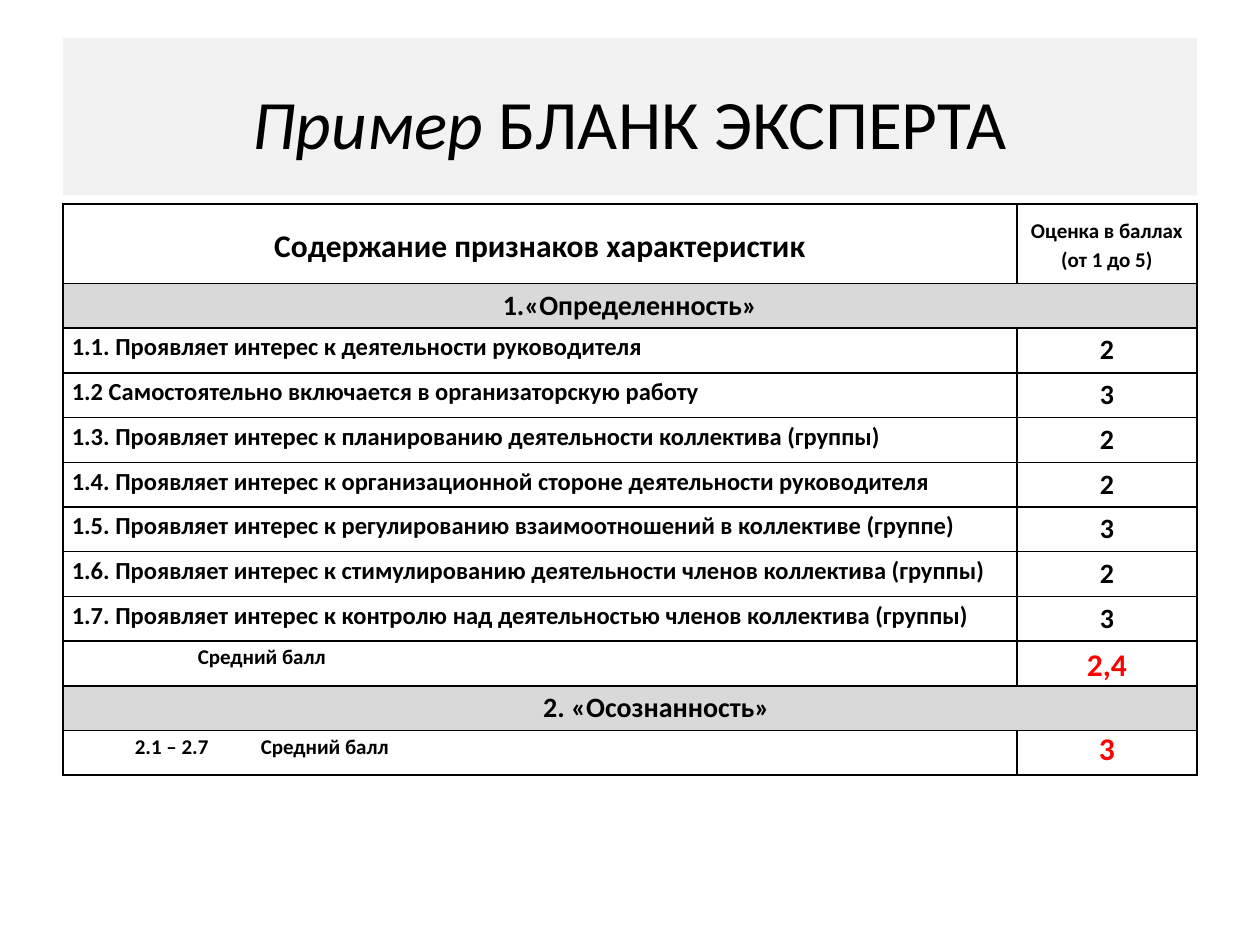
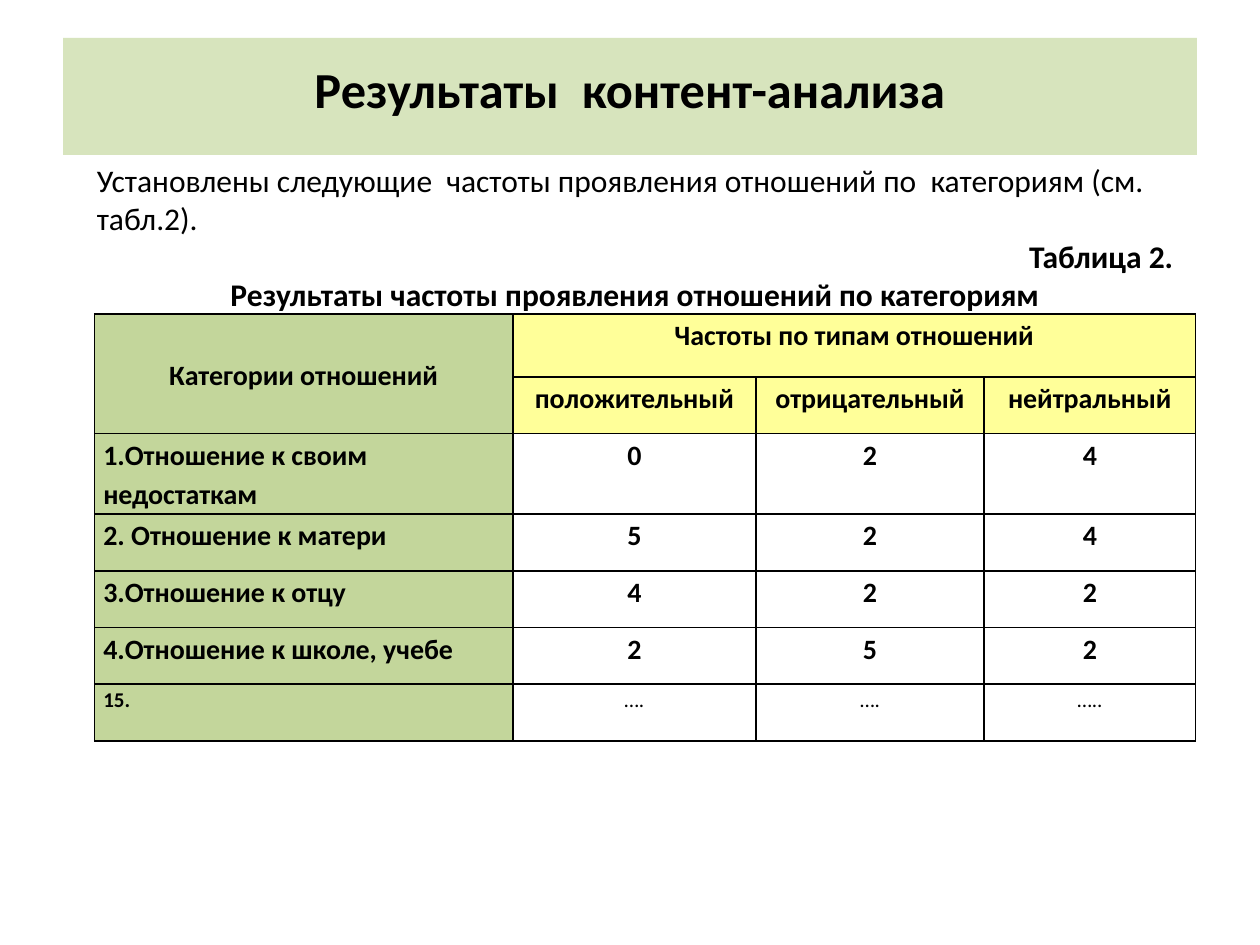
"""Build two slides: an expert's rating form and content-analysis results."""
from lxml import etree
from pptx import Presentation
from pptx.dml.color import RGBColor
from pptx.enum.text import MSO_ANCHOR, MSO_AUTO_SIZE, PP_ALIGN
from pptx.oxml.ns import qn
from pptx.util import Inches, Pt

LEFT, CENTER, RIGHT, JUSTIFY = PP_ALIGN.LEFT, PP_ALIGN.CENTER, PP_ALIGN.RIGHT, PP_ALIGN.JUSTIFY
TOP, MIDDLE = MSO_ANCHOR.TOP, MSO_ANCHOR.MIDDLE
FIXED = MSO_AUTO_SIZE.NONE

FONT = "Calibri"
BLACK, RED = "000000", "FF0000"
GRAY, GREEN, YELLOW = "D9D9D9", "C3D69B", "FFFF99"
TITLE_ONLY = 5
TITLE_LEFT, TITLE_TOP, TITLE_WIDTH = 0.5, 0.3, 9
SPACING = 1.15
SIDE_MARGIN = 0.07
AVERAGE_TAB = 7.32

DEFAULT_STYLE = dict(size=16, align=CENTER, bold=True, color=BLACK, fill=None,
                     anchor=TOP, spacing=SPACING, indent=0, tab=None)
STYLES = {
    "form heading": dict(size=18, anchor=MIDDLE),
    "scale": dict(size=12, anchor=MIDDLE),
    "section": dict(fill=GRAY),
    "indented section": dict(fill=GRAY, indent=0.42),
    "trait": dict(size=14, align=JUSTIFY),
    "score": {},
    "average": dict(size=12, align=LEFT, indent=0.5, tab=AVERAGE_TAB),
    "result": dict(size=18, color=RED),
    "last result": dict(size=18, color=RED, spacing=1.0),
    "category heading": dict(fill=GREEN, anchor=MIDDLE),
    "type": dict(fill=YELLOW),
    "category": dict(fill=GREEN, align=LEFT),
    "last category": dict(fill=GREEN, align=JUSTIFY, size=12),
    "ellipsis": dict(size=12, bold=False),
}

FORM_TITLE = [("Пример ", True), ("БЛАНК ЭКСПЕРТА", False)]
TRAITS = [
    ("1.1. Проявляет интерес к деятельности руководителя", "2"),
    ("1.2 Самостоятельно включается в организаторскую работу", "3"),
    ("1.3. Проявляет интерес к планированию деятельности коллектива (группы)", "2"),
    ("1.4. Проявляет интерес к организационной стороне деятельности руководителя", "2"),
    ("1.5. Проявляет интерес к регулированию взаимоотношений в коллективе (группе)", "3"),
    ("1.6. Проявляет интерес к стимулированию деятельности членов коллектива (группы)", "2"),
    ("1.7. Проявляет интерес к контролю над деятельностью членов коллектива (группы)", "3"),
]
FORM_ROWS = [
    [("Содержание признаков характеристик", "form heading"),
     ("Оценка в баллах\n(от 1 до 5)", "scale")],
    [("1.«Определенность»", "section"), None],
    *[[(trait, "trait"), (score, "score")] for trait, score in TRAITS],
    [("\tСредний балл", "average"), ("2,4", "result")],
    [("2. «Осознанность»", "indented section"), None],
    [("2.1 – 2.7\tСредний балл", "average"), ("3", "last result")],
]
FORM_MERGES = [((1, 0), (1, 1)), ((10, 0), (10, 1))]

RESULTS_TITLE = [("Результаты  контент-анализа", False)]
INTRO = [
    ("Установлены следующие  частоты проявления отношений по  категориям (см. табл.2).",
     LEFT, False),
    ("Таблица 2.", RIGHT, True),
    ("Результаты частоты проявления отношений по категориям", CENTER, True),
]
RELATION_TYPES = ["положительный", "отрицательный", "нейтральный"]
FREQUENCIES = [
    ("1.Отношение к своим недостаткам", "0", "2", "4"),
    ("2. Отношение к матери", "5", "2", "4"),
    ("3.Отношение к отцу", "4", "2", "2"),
    ("4.Отношение к школе, учебе", "2", "5", "2"),
]
RESULTS_ROWS = [
    [("Категории отношений", "category heading"),
     ("Частоты по типам отношений", "type"), None, None],
    [None, *[(name, "type") for name in RELATION_TYPES]],
    *[[(category, "category"), *[(count, "score") for count in counts]]
      for category, *counts in FREQUENCIES],
    [("15.", "last category"), *[(dots, "ellipsis") for dots in ("….", "….", "…..")]],
]
RESULTS_MERGES = [((0, 0), (1, 0)), ((0, 1), (0, 3))]


def rgb(value):
    """Turn a hex string into a colour."""
    return RGBColor.from_string(value)


def format_run(run, size, bold=False, italic=False, color=BLACK):
    """Give a run its font."""
    font = run.font
    font.name, font.size, font.bold, font.italic = FONT, Pt(size), bold, italic
    font.color.rgb = rgb(color)


def add_title(slide, parts, height, fill, size, bold=False, top_inset=0.05, bottom_inset=0.05):
    """Turn the title placeholder into a filled band."""
    title = slide.shapes.title
    title.left, title.top = Inches(TITLE_LEFT), Inches(TITLE_TOP)
    title.width, title.height = Inches(TITLE_WIDTH), Inches(height)
    title.fill.solid()
    title.fill.fore_color.rgb = rgb(fill)
    frame = title.text_frame
    frame.auto_size, frame.vertical_anchor = FIXED, MIDDLE
    frame.margin_top, frame.margin_bottom = Inches(top_inset), Inches(bottom_inset)
    paragraph = frame.paragraphs[0]
    paragraph.alignment = CENTER
    for text, italic in parts:
        run = paragraph.add_run()
        run.text = text
        format_run(run, size, bold, italic)


def add_borders(cell):
    """Draw thin black lines on all four sides of a cell."""
    properties = cell._tc.get_or_add_tcPr()
    for side in ("lnL", "lnR", "lnT", "lnB"):
        line = etree.SubElement(properties, qn(f"a:{side}"), w=str(Pt(1)))
        solid = etree.SubElement(line, qn("a:solidFill"))
        etree.SubElement(solid, qn("a:srgbClr"), val=BLACK)


def fill_cell(cell, text, style_name):
    """Write a cell in one of the named styles."""
    style = {**DEFAULT_STYLE, **STYLES[style_name]}
    cell.vertical_anchor = style["anchor"]
    if style["fill"]:
        cell.fill.solid()
        cell.fill.fore_color.rgb = rgb(style["fill"])
    cell.text_frame.text = text
    for paragraph in cell.text_frame.paragraphs:
        paragraph.alignment, paragraph.line_spacing = style["align"], style["spacing"]
        properties = paragraph._p.get_or_add_pPr()
        if style["indent"]:
            properties.set("marL", "0")
            properties.set("indent", str(Inches(style["indent"])))
        if style["tab"]:
            tabs = etree.SubElement(properties, qn("a:tabLst"))
            etree.SubElement(tabs, qn("a:tab"), pos=str(Inches(style["tab"])), algn="r")
        for run in paragraph.runs:
            format_run(run, style["size"], style["bold"], color=style["color"])


def add_grid(slide, left, top, widths, heights, rows, merges):
    """Add a bordered table with merged headings."""
    table = slide.shapes.add_table(
        len(rows), len(widths), Inches(left), Inches(top),
        Inches(sum(widths)), Inches(sum(heights))).table
    table.first_row = table.horz_banding = False
    for column, width in zip(table.columns, widths):
        column.width = Inches(width)
    for row, height, contents in zip(table.rows, heights, rows):
        row.height = Inches(height)
        for cell, content in zip(row.cells, contents):
            cell.margin_left = cell.margin_right = Inches(SIDE_MARGIN)
            cell.margin_top = cell.margin_bottom = 0
            add_borders(cell)
            cell.fill.background()
            if content:
                fill_cell(cell, *content)
    for first, last in merges:
        table.cell(*first).merge(table.cell(*last))


def add_intro(slide):
    """Add the lead-in and the table caption."""
    frame = slide.shapes.add_textbox(
        Inches(0.67), Inches(1.23), Inches(8.74), Inches(1.31)).text_frame
    frame.word_wrap = True
    frame.text = "\n".join(text for text, _, _ in INTRO)
    for paragraph, (_, alignment, bold) in zip(frame.paragraphs, INTRO):
        paragraph.alignment = alignment
        format_run(paragraph.runs[0], 18, bold)


def main():
    """Build and save the presentation."""
    deck = Presentation()
    deck.slide_width, deck.slide_height = Inches(10), Inches(7.5)
    layout = deck.slide_layouts[TITLE_ONLY]

    form = deck.slides.add_slide(layout)
    add_title(form, FORM_TITLE, 1.25, "F2F2F2", 39.6, top_inset=0.14)
    add_grid(form, 0.5, 1.62, [7.57, 1.43], [0.63] + [0.355] * 11, FORM_ROWS, FORM_MERGES)

    results = deck.slides.add_slide(layout)
    add_title(results, RESULTS_TITLE, 0.93, "D7E4BD", 28.8, bold=True, bottom_inset=0.17)
    add_grid(results, 0.75, 2.49, [3.32, 1.93, 1.81, 1.68],
             [0.5, 0.45, 0.64] + [0.45] * 4, RESULTS_ROWS, RESULTS_MERGES)
    add_intro(results)

    deck.save("out.pptx")


if __name__ == "__main__":
    main()
